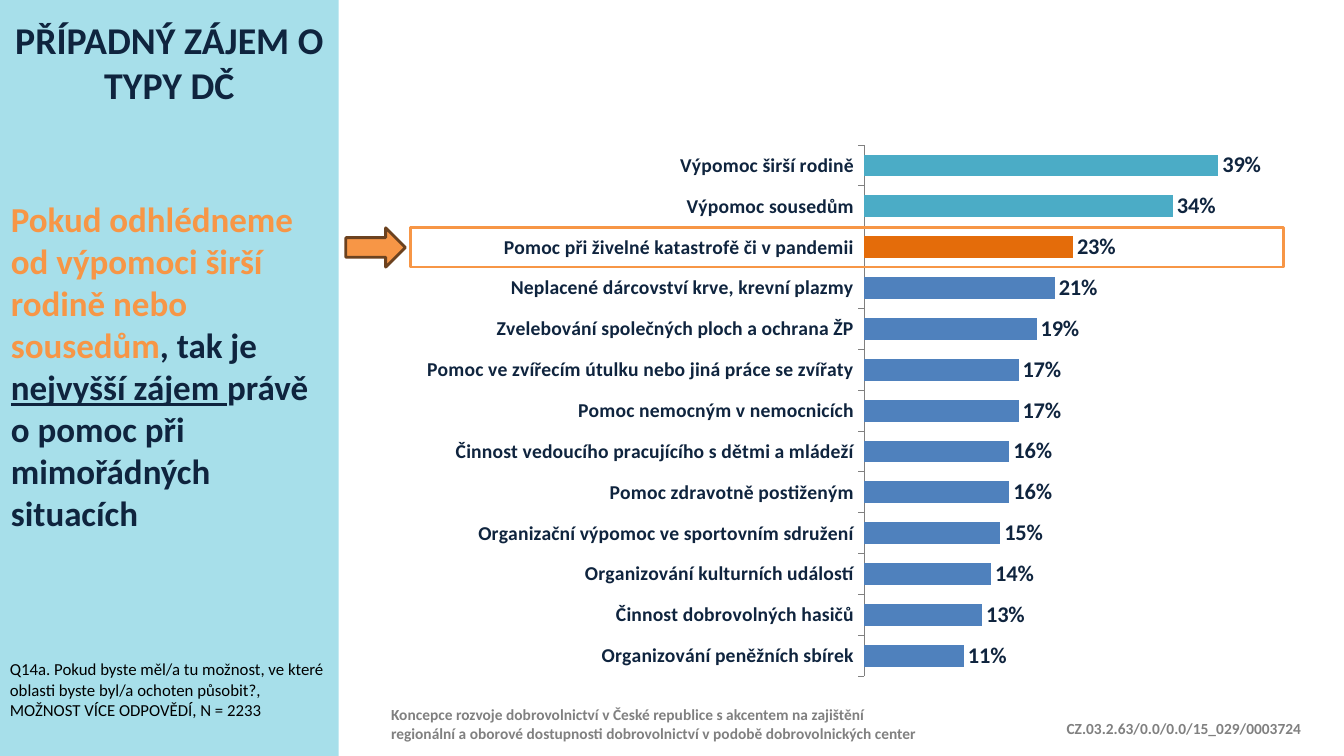
from lxml import etree
from pptx import Presentation
from pptx.chart.data import CategoryChartData
from pptx.dml.color import RGBColor
from pptx.enum.chart import XL_CHART_TYPE, XL_LABEL_POSITION, XL_TICK_MARK
from pptx.enum.shapes import MSO_SHAPE
from pptx.enum.text import MSO_ANCHOR, PP_ALIGN
from pptx.oxml import parse_xml
from pptx.oxml.ns import nsdecls, qn
from pptx.util import Inches, Pt

NAVY = RGBColor(0x0F, 0x24, 0x3E)
GRAY = RGBColor(0x80, 0x80, 0x80)
BLACK = RGBColor(0, 0, 0)
AQUA = RGBColor(0x40, 0xBA, 0xD2)
TEAL = RGBColor(0x4B, 0xAC, 0xC6)
BLUE = RGBColor(0x4F, 0x81, 0xBD)
ORANGE = RGBColor(0xF7, 0x96, 0x46)
RUST = RGBColor(0xE4, 0x6C, 0x0A)
BROWN = RGBColor(0x6C, 0x42, 0x1F)

SIDE = 3.36
ROWS = [
    ("Výpomoc širší rodině", 0.39, TEAL),
    ("Výpomoc sousedům", 0.34, TEAL),
    ("Pomoc při živelné katastrofě či v pandemii", 0.23, RUST),
    ("Neplacené dárcovství krve, krevní plazmy", 0.21, BLUE),
    ("Zvelebování společných ploch a ochrana ŽP", 0.19, BLUE),
    ("Pomoc ve zvířecím útulku nebo jiná práce se zvířaty", 0.17, BLUE),
    ("Pomoc nemocným v nemocnicích", 0.17, BLUE),
    ("Činnost vedoucího pracujícího s dětmi a mládeží", 0.16, BLUE),
    ("Pomoc zdravotně postiženým", 0.16, BLUE),
    ("Organizační výpomoc ve sportovním sdružení", 0.15, BLUE),
    ("Organizování kulturních událostí", 0.14, BLUE),
    ("Činnost dobrovolných hasičů", 0.13, BLUE),
    ("Organizování peněžních sbírek", 0.11, BLUE),
]
PLOT = {"x": 0.515, "y": 0.02, "w": 0.464, "h": 0.96}

FOOT = {"size": Pt(11), "bold": True, "color": GRAY}
HEAD = {"size": Pt(27), "bold": True, "color": NAVY}
BODY = {"size": Pt(25), "bold": True, "color": NAVY}
NOTE = {"size": Pt(12), "color": BLACK}
TEXTS = [
    ((3.78, 6.95, 5.51, 0.77), {}, {}, [
        ("Koncepce rozvoje dobrovolnictví v České republice s akcentem na zajištění "
         "regionální a oborové dostupnosti dobrovolnictví v podobě dobrovolnických center", FOOT)]),
    ((10.48, 7.08, 2.57, 0.29), {"word_wrap": False}, {}, [
        ("CZ.03.2.63/0.0/0.0/15_029/0003724", FOOT)]),
    ((0, 0, SIDE, 1.23), {"vertical_anchor": MSO_ANCHOR.MIDDLE}, {"alignment": PP_ALIGN.CENTER}, [
        ("PŘÍPADNÝ ZÁJEM O TYPY DČ", HEAD)]),
    ((0.01, 1.86, SIDE, 3.54), {"vertical_anchor": MSO_ANCHOR.MIDDLE}, {}, [
        ("Pokud odhlédneme od výpomoci širší rodině nebo sousedům", {**BODY, "color": ORANGE}),
        (", tak je ", BODY),
        None,
        ("nejvyšší zájem ", {**BODY, "underline": True}),
        ("právě o pomoc při mimořádných situacích", BODY)]),
    ((0, 6.49, SIDE, 0.71), {}, {}, [
        ("Q14a. Pokud byste měl/a tu možnost, ve které oblasti byste byl/a ochoten působit?, "
         "MOŽNOST VÍCE ODPOVĚDÍ, N = 2233", NOTE)]),
]
SHAPES = [
    (MSO_SHAPE.RECTANGLE, (4.07, 2.26, 8.66, 0.39), None, ORANGE),
    (MSO_SHAPE.RIGHT_ARROW, (3.43, 2.26, 0.59, 0.39), ORANGE, BROWN),
]


def style(font, look):
    for key, val in {"name": "Calibri", **look}.items():
        if key == "color":
            font.color.rgb = val
        else:
            setattr(font, key, val)


def put(obj, look):
    for key, val in look.items():
        setattr(obj, key, val)


def add_text(slide, box, frame, para, runs):
    text = slide.shapes.add_textbox(*map(Inches, box)).text_frame
    put(text, {"word_wrap": True, **frame})
    line = text.paragraphs[0]
    put(line, para)
    for item in runs:
        if item is None:
            line.add_line_break()
            continue
        run = line.add_run()
        run.text = item[0]
        style(run.font, item[1])


def add_shape(slide, kind, box, fill, edge):
    shape = slide.shapes.add_shape(kind, *map(Inches, box))
    shape.shadow.inherit = False
    if fill is None:
        shape.fill.background()
    else:
        shape.fill.solid()
        shape.fill.fore_color.rgb = fill
    if edge is None:
        shape.line.fill.background()
    else:
        shape.line.color.rgb = edge
        shape.line.width = Pt(2)
    return shape


def add_bars(slide):
    rows = ROWS[::-1]
    data = CategoryChartData(number_format="0%")
    data.categories = [row[0] for row in rows]
    data.add_series("Series 1", [row[1] for row in rows])
    box = map(Inches, (4.07, 1.33, 8.74, 5.49))
    chart = slide.shapes.add_chart(XL_CHART_TYPE.BAR_CLUSTERED, *box, data).chart
    put(chart, {"has_legend": False, "has_title": False})
    style(chart.font, {"size": Pt(11), "color": BLACK})

    axis = chart.category_axis
    put(axis, {"major_tick_mark": XL_TICK_MARK.OUTSIDE, "has_major_gridlines": False})
    style(axis.tick_labels.font, {"size": Pt(14), "bold": True, "color": NAVY})
    axis.format.line.color.rgb = GRAY
    axis.format.line.width = Pt(0.75)
    put(chart.value_axis, {"visible": False, "has_major_gridlines": False,
                           "minimum_scale": 0, "maximum_scale": 0.45})

    plot = chart.plots[0]
    put(plot, {"gap_width": 86, "vary_by_categories": False, "has_data_labels": True})
    put(plot.data_labels, {"show_value": True, "position": XL_LABEL_POSITION.OUTSIDE_END,
                           "number_format": "0%", "number_format_is_linked": False})
    style(plot.data_labels.font, {"size": Pt(16), "bold": True, "color": NAVY})
    bars = plot.series[0]
    bars.format.fill.solid()
    bars.format.fill.fore_color.rgb = BLUE
    for num, (_, _, hue) in enumerate(rows):
        if hue != BLUE:
            fill = bars.points[num].format.fill
            fill.solid()
            fill.fore_color.rgb = hue

    modes = '<c:layoutTarget val="inner"/><c:xMode val="edge"/><c:yMode val="edge"/>'
    sizes = "".join(f'<c:{key} val="{val}"/>' for key, val in PLOT.items())
    area = chart._chartSpace.find(".//" + qn("c:plotArea"))
    for old in area.findall(qn("c:layout")):
        area.remove(old)
    area.insert(0, parse_xml(
        f'<c:layout {nsdecls("c")}><c:manualLayout>{modes}{sizes}</c:manualLayout></c:layout>'))


def main():
    deck = Presentation()
    put(deck, {"slide_width": Inches(13.33), "slide_height": Inches(7.5)})
    slide = deck.slides.add_slide(deck.slide_layouts[6])
    panel = add_shape(slide, MSO_SHAPE.RECTANGLE, (0, 0, SIDE, 7.5), AQUA, None)
    tint = panel.fill._xPr.find(".//" + qn("a:srgbClr"))
    etree.SubElement(tint, qn("a:alpha"), val="46000")
    add_bars(slide)
    for item in TEXTS:
        add_text(slide, *item)
    for item in SHAPES:
        add_shape(slide, *item)
    deck.save("out.pptx")


if __name__ == "__main__":
    main()
